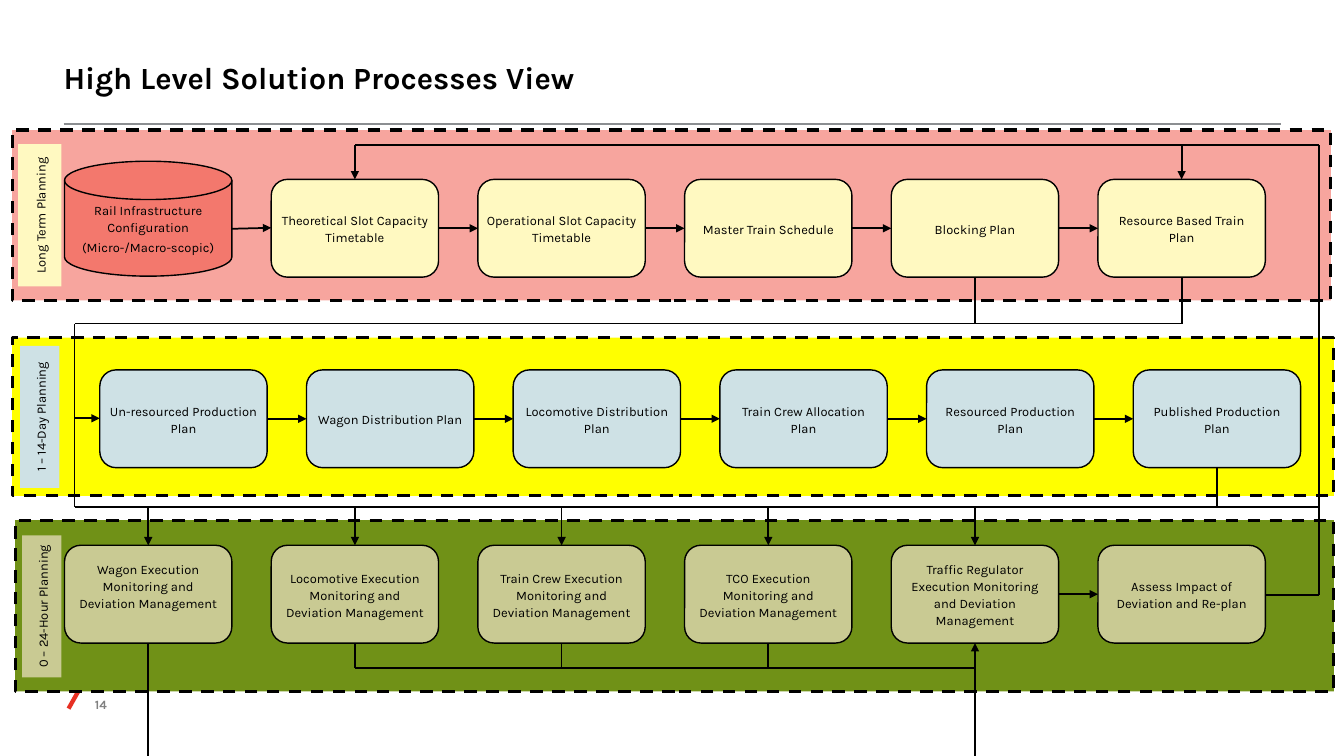
from itertools import pairwise

from lxml import etree
from pptx import Presentation
from pptx.dml.color import RGBColor
from pptx.enum.dml import MSO_LINE
from pptx.enum.shapes import MSO_CONNECTOR, MSO_SHAPE
from pptx.enum.text import MSO_ANCHOR, PP_ALIGN
from pptx.oxml.ns import qn
from pptx.util import Inches, Pt

RECTANGLE = MSO_SHAPE.RECTANGLE
ROUNDED = MSO_SHAPE.ROUNDED_RECTANGLE
DISK = MSO_SHAPE.FLOWCHART_MAGNETIC_DISK
STRAIGHT, ELBOW = MSO_CONNECTOR.STRAIGHT, MSO_CONNECTOR.ELBOW
DASH = MSO_LINE.DASH
MIDDLE, BOTTOM = MSO_ANCHOR.MIDDLE, MSO_ANCHOR.BOTTOM
LEFT, CENTER, RIGHT = PP_ALIGN.LEFT, PP_ALIGN.CENTER, PP_ALIGN.RIGHT

FONT = "Karla"
BLACK = "000000"
CREAM, ICE, KHAKI = "FFF9C1", "CEE1E5", "C9CA93"
BOX_WIDTH, BOX_HEIGHT, STEP = 1.66, 0.97, 2.05
SIDE_TOP, SIDE_LEFT, SIDE_BOTTOM, SIDE_RIGHT = range(4)
QUARTER_TURN = "5400000"

BANDS = [
    (0.15, 5.16, 13.08, 1.7, "709117"),
    (0.12, 3.35, 13.11, 1.57, "FFFF00"),
    (0.12, 1.29, 13.08, 1.69, "F7A59E"),
]
BAND_LABELS = [
    ("Long Term Planning", -0.31, 1.92, 0.43, CREAM),
    ("1 – 14-Day Planning", -0.31, 3.94, 0.39, ICE),
    ("0 – 24-Hour Planning", -0.29, 5.82, 0.39, KHAKI),
]
LONG_TERM = [
    "Theoretical Slot Capacity Timetable",
    "Operational Slot Capacity Timetable",
    "Master Train Schedule",
    "Blocking Plan",
    "Resource Based Train Plan",
]
FORTNIGHT = [
    "Un-resourced Production Plan",
    "Wagon Distribution Plan",
    "Locomotive Distribution Plan",
    "Train Crew Allocation Plan",
    "Resourced Production Plan",
    "Published Production Plan",
]
DAY = [
    "Wagon Execution Monitoring and Deviation Management",
    "Locomotive Execution Monitoring and Deviation Management",
    "Train Crew Execution Monitoring and Deviation Management",
    "TCO Execution Monitoring and Deviation Management",
    "Traffic Regulator Execution Monitoring and Deviation Management",
    "Assess Impact of Deviation and Re-plan",
]


def color(value):
    """Turn a hex string into a colour."""
    return RGBColor.from_string(value)


def write(shape, lines, size, hue=BLACK, bold=False, align=CENTER, anchor=MIDDLE, inset=0.0):
    """Put formatted paragraphs into a shape."""
    frame = shape.text_frame
    frame.text = "\n".join(lines)
    frame.word_wrap = True
    frame.vertical_anchor = anchor
    frame.margin_left = frame.margin_right = Inches(inset)
    frame.margin_top = frame.margin_bottom = Inches(inset)
    for para in frame.paragraphs:
        para.alignment = align
        for span in para.runs:
            span.font.name = FONT
            span.font.size = Pt(size)
            span.font.bold = bold
            span.font.color.rgb = color(hue)


def add_block(page, kind, left, top, width, height, fill, weight=None):
    """Add a filled preset shape, outlined when a weight is given."""
    shape = page.shapes.add_shape(kind, Inches(left), Inches(top), Inches(width), Inches(height))
    shape.shadow.inherit = False
    shape.fill.solid()
    shape.fill.fore_color.rgb = color(fill)
    if weight:
        shape.line.color.rgb = color(BLACK)
        shape.line.width = Pt(weight)
    else:
        shape.line.fill.background()
    return shape


def label(shape, *lines):
    """Write the diagram's small centred text into a shape."""
    write(shape, lines, 9.2, inset=0.04)
    for index, para in enumerate(shape.text_frame.paragraphs):
        para.line_spacing = 1.1
        para.space_before = Pt(0.9 if index else 0)
        para.space_after = Pt(0.9)


def add_line(page, start, end, hue=BLACK, weight=1.25, arrow=False, kind=STRAIGHT):
    """Add a connector, with an arrowhead at its end on request."""
    (x1, y1), (x2, y2) = start, end
    line = page.shapes.add_connector(kind, Inches(x1), Inches(y1), Inches(x2), Inches(y2))
    line.line.color.rgb = color(hue)
    line.line.width = Pt(weight)
    if arrow:
        etree.SubElement(line.line._get_or_add_ln(), qn("a:tailEnd"), type="triangle")
    etree.SubElement(line._element.spPr, qn("a:effectLst"))
    return line


def add_route(page, *points, arrow=True):
    """Join points by straight lines, the last one ending in an arrowhead."""
    legs = list(pairwise(points))
    for index, (start, end) in enumerate(legs):
        add_line(page, start, end, arrow=arrow and index == len(legs) - 1)


def add_row(page, texts, left, top, fill):
    """Add a row of process boxes at equal steps."""
    boxes = []
    for index, text in enumerate(texts):
        box = add_block(page, ROUNDED, left + index * STEP, top, BOX_WIDTH, BOX_HEIGHT, fill, 1)
        label(box, text)
        boxes.append(box)
    return boxes


def link(page, boxes):
    """Connect neighbouring boxes with glued arrows."""
    for first, second in pairwise(boxes):
        arrow = add_line(page, (0, 0), (1, 1), arrow=True)
        arrow.begin_connect(first, SIDE_RIGHT)
        arrow.end_connect(second, SIDE_LEFT)


def drop(page, upper, lower):
    """Glue an elbow arrow from the foot of one box to the top of one further left."""
    arrow = add_line(page, (0, 0), (1, 1), arrow=True, kind=ELBOW)
    arrow.begin_connect(upper, SIDE_BOTTOM)
    arrow.end_connect(lower, SIDE_TOP)
    middle_x, middle_y = (arrow.begin_x + arrow.end_x) // 2, (arrow.begin_y + arrow.end_y) // 2
    half_run, half_fall = arrow.width // 2, arrow.height // 2
    arrow.begin_x, arrow.end_x = middle_x - half_fall, middle_x + half_fall
    arrow.begin_y, arrow.end_y = middle_y - half_run, middle_y + half_run
    arrow._element.spPr.get_or_add_xfrm().set("rot", QUARTER_TURN)


def add_routes(page):
    """Add the lines that run between and around the rows."""
    centers = [1.47 + index * STEP for index in range(6)]
    blocking, resource = centers[4], centers[5]
    add_route(page, (2.3, 2.27), (2.69, 2.26))
    add_route(page, (resource, 2.75), (resource, 3.21), (0.74, 3.21), (0.74, 4.15), (0.99, 4.15))
    add_route(page, (blocking, 2.75), (blocking, 3.21), arrow=False)
    add_route(page, (13.08, 5.03), (0.74, 5.03), (0.74, 4.15), arrow=False)

    add_route(page, (12.55, 5.9), (13.08, 5.9), (13.08, 1.44), (centers[1], 1.44), (centers[1], 1.78))
    add_route(page, (resource, 1.44), (resource, 1.78))

    for center in centers[1:4]:
        add_route(page, (center, 6.38), (center, 6.63), arrow=False)
    add_route(page, (centers[1], 6.63), (blocking, 6.63), arrow=False)
    add_route(page, (centers[0], 6.38), (centers[0], 7.5), arrow=False)
    add_route(page, (blocking, 7.5), (blocking, 6.38))


def add_frame(page):
    """Add the title, its rule, the page number and the accent stroke."""
    title = page.shapes.title
    title.left, title.top = Inches(0.63), Inches(0.37)
    title.width, title.height = Inches(11.44), Inches(0.79)
    write(title, ["High Level Solution Processes View"], 22, bold=True, align=LEFT)
    add_line(page, (0.63, 1.23), (12.71, 1.23), "8B8E91", 2)
    add_line(page, (0.68, 7.03), (0.86, 6.71), "E73023", 3.05)
    number = page.shapes.add_textbox(Inches(0.49), Inches(6.88), Inches(0.57), Inches(0.23))
    write(number, ["14"], 9, "808080", bold=True, align=RIGHT, anchor=BOTTOM)
    number.text_frame.margin_bottom = Inches(0.05)


def main():
    """Build the slide and save it."""
    deck = Presentation()
    deck.slide_width, deck.slide_height = Inches(13.33), Inches(7.5)
    page = deck.slides.add_slide(deck.slide_layouts[5])
    add_frame(page)
    for left, top, width, height, fill in BANDS:
        band = add_block(page, RECTANGLE, left, top, width, height, fill, 2.25)
        band.line.dash_style = DASH
    infrastructure = add_block(page, DISK, 0.64, 1.6, BOX_WIDTH, 1.14, "F3786D", 1)
    label(infrastructure, "Rail Infrastructure Configuration", "(Micro-/Macro-scopic)")
    long_term = add_row(page, LONG_TERM, 2.69, 1.78, CREAM)
    fortnight = add_row(page, FORTNIGHT, 0.99, 3.67, ICE)
    day = add_row(page, DAY, 0.64, 5.41, KHAKI)
    day[0].text_frame.margin_bottom = Inches(0.22)
    for chain in (long_term, fortnight, day[4:]):
        link(page, chain)
    for box in day[:5]:
        drop(page, fortnight[-1], box)
    add_routes(page)
    for text, left, top, height, fill in BAND_LABELS:
        tag = add_block(page, RECTANGLE, left, top, 1.41, height, fill)
        tag.rotation = 270
        label(tag, text)
    deck.save("out.pptx")


if __name__ == "__main__":
    main()
